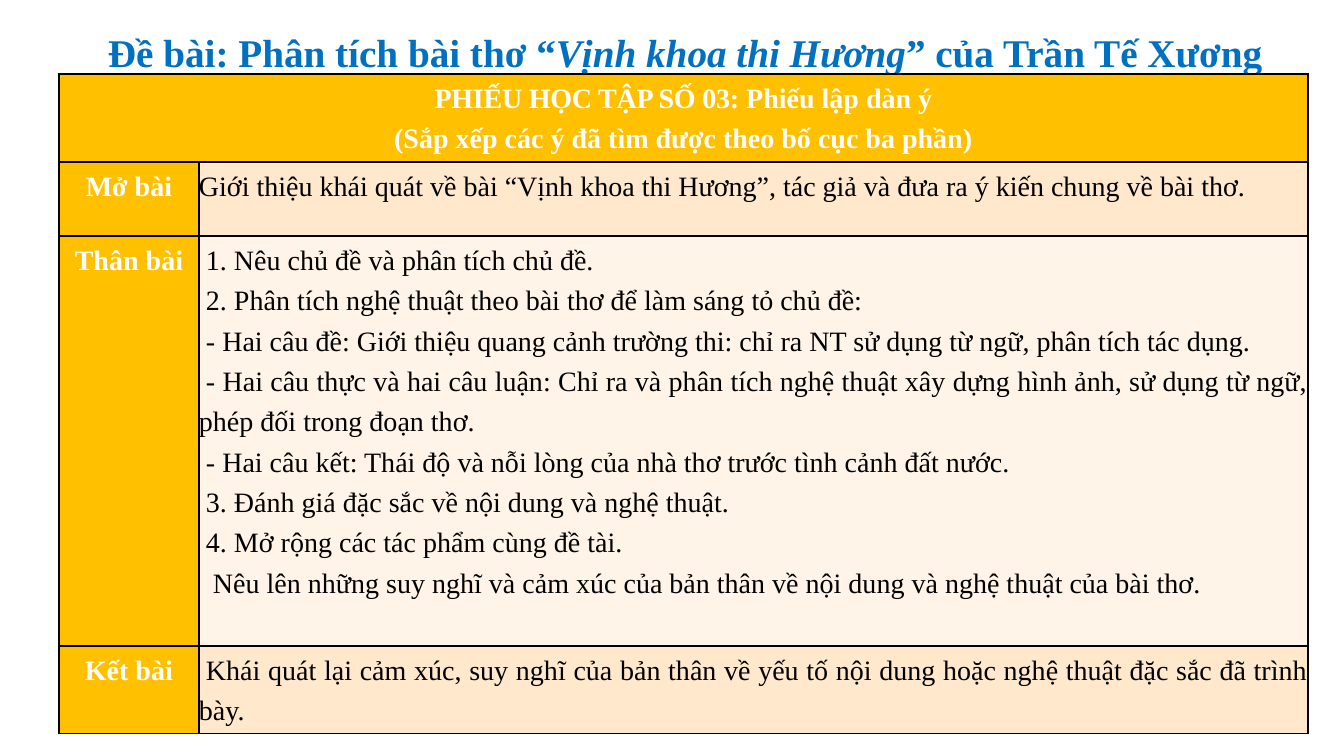
from dataclasses import dataclass

from lxml.etree import SubElement
from pptx import Presentation
from pptx.dml.color import RGBColor as RGB
from pptx.enum.text import MSO_AUTO_SIZE as AUTO, MSO_ANCHOR as ANCHOR, PP_ALIGN as AL
from pptx.oxml.ns import qn
from pptx.util import Emu, Pt

SCALE = 914400 / 100.8


@dataclass(frozen=True)
class Theme:
    font: str = "Times New Roman"
    title_size: int = 28
    body_size: int = 20
    spacing: float = 1.3
    border: float = 1
    title: str = "0070C0"
    label: str = "FFFFFF"
    body: str = "000000"
    gold: str = "FFC000"
    band: str = "FFE8CC"
    pale: str = "FFF4E7"


THEME = Theme()
TITLE_FMT = dict(size=Pt(THEME.title_size), name=THEME.font, bold=True)
LABEL_FMT = dict(size=Pt(THEME.body_size), name=THEME.font, bold=True)
BODY_FMT = LABEL_FMT | dict(bold=False)

TITLE = [("Đề bài: Phân tích bài thơ “", False),
         ("Vịnh khoa thi Hương", True),
         ("” của Trần Tế Xương", False)]
HEADER = [["PHIẾU HỌC TẬP SỐ 03", ": Phiếu lập dàn ý"],
          ["(Sắp xếp các ý đã tìm được theo bố cục ba phần)"]]
SECTIONS = [
    ("Mở bài", THEME.band, AL.LEFT, [
        (0, "Giới thiệu khái quát về bài “Vịnh khoa thi Hương”, tác giả và đưa ra ý kiến chung về bài thơ."),
    ]),
    ("Thân bài", THEME.pale, AL.JUSTIFY, [
        (7, "1. Nêu chủ đề và phân tích chủ đề."),
        (7, "2. Phân tích nghệ thuật theo bài thơ để làm sáng tỏ chủ đề:"),
        (7, "- Hai câu đề: Giới thiệu quang cảnh trường thi: chỉ ra NT sử dụng từ ngữ, phân tích tác dụng."),
        (7, "- Hai câu thực và hai câu luận: Chỉ ra và phân tích nghệ thuật xây dựng hình ảnh, "
            "sử dụng từ ngữ, phép đối trong đoạn thơ."),
        (7, "- Hai câu kết: Thái độ và nỗi lòng của nhà thơ trước tình cảnh đất nước."),
        (7, "3. Đánh giá đặc sắc về nội dung và nghệ thuật."),
        (7, "4. Mở rộng các tác phẩm cùng đề tài."),
        (14, "Nêu lên những suy nghĩ và cảm xúc của bản thân về nội dung và nghệ thuật của bài thơ."),
    ]),
    ("Kết bài", THEME.band, AL.JUSTIFY, [
        (7, "Khái quát lại cảm xúc, suy nghĩ của bản thân về yếu tố nội dung hoặc "
            "nghệ thuật đặc sắc đã trình bày."),
    ]),
]
COLUMNS = [140, 1109]
ROWS = [88, 74, 410, 87]


def px(n):
    return Emu(round(n * SCALE))


def apply(target, values):
    for name, value in values.items():
        setattr(target, name, value)


def add_run(p, text, fmt, color):
    r = p.add_run()
    r.text = text
    apply(r.font, fmt)
    r.font.color.rgb = RGB.from_string(color)
    return r


def add_paragraph(tf, index, align, indent=0):
    p = tf.add_paragraph() if index else tf.paragraphs[0]
    apply(p, dict(alignment=align, line_spacing=THEME.spacing))
    if indent:
        p._p.get_or_add_pPr().set("indent", str(px(indent)))
    return p


def style_cell(cell, fill):
    apply(cell, dict(margin_left=0, margin_right=0, margin_top=0,
                     margin_bottom=0, vertical_anchor=ANCHOR.TOP))
    tcPr = cell._tc.get_or_add_tcPr()
    for side in ("lnL", "lnR", "lnT", "lnB"):
        ln = SubElement(tcPr, qn(f"a:{side}"), w=str(Pt(THEME.border)))
        SubElement(SubElement(ln, qn("a:solidFill")), qn("a:srgbClr"), val=THEME.body)
    cell.fill.solid()
    cell.fill.fore_color.rgb = RGB.from_string(fill)


def add_title(s, x, y, w, h):
    tf = s.shapes.add_textbox(px(x), px(y), px(w), px(h)).text_frame
    apply(tf, dict(word_wrap=False, auto_size=AUTO.SHAPE_TO_FIT_TEXT))
    p = add_paragraph(tf, 0, AL.JUSTIFY)
    for text, italic in TITLE:
        add_run(p, text, TITLE_FMT | dict(italic=italic), THEME.title)


def add_outline(s, x, y, w, h):
    table = s.shapes.add_table(len(ROWS), len(COLUMNS), px(x), px(y), px(w), px(h)).table
    apply(table, dict(first_row=False, horz_banding=False))
    for column, width in zip(table.columns, COLUMNS):
        column.width = px(width)
    for row, height in zip(table.rows, ROWS):
        row.height = px(height)

    header = table.cell(0, 0)
    for cell in table.rows[0].cells:
        style_cell(cell, THEME.gold)
    header.merge(table.cell(0, 1))
    for i, parts in enumerate(HEADER):
        p = add_paragraph(header.text_frame, i, AL.CENTER)
        for text in parts:
            add_run(p, text, LABEL_FMT, THEME.label)
    header.text_frame.paragraphs[0].runs[0]._r.get_or_add_rPr().set("spc", "-20")

    for i, (label, fill, align, lines) in enumerate(SECTIONS, 1):
        name, content = table.rows[i].cells
        style_cell(name, THEME.gold)
        style_cell(content, fill)
        add_run(add_paragraph(name.text_frame, 0, AL.CENTER), label, LABEL_FMT, THEME.label)
        for j, (indent, text) in enumerate(lines):
            p = add_paragraph(content.text_frame, j, align, indent)
            add_run(p, text, BODY_FMT, THEME.body)


def main():
    prs = Presentation()
    apply(prs, dict(slide_width=px(1344), slide_height=px(756)))
    s = prs.slides.add_slide(prs.slide_layouts[6])
    add_title(s, 98, 9, 1187, 66)
    add_outline(s, 59, 74, sum(COLUMNS), sum(ROWS))
    prs.save("out.pptx")


if __name__ == "__main__":
    main()
